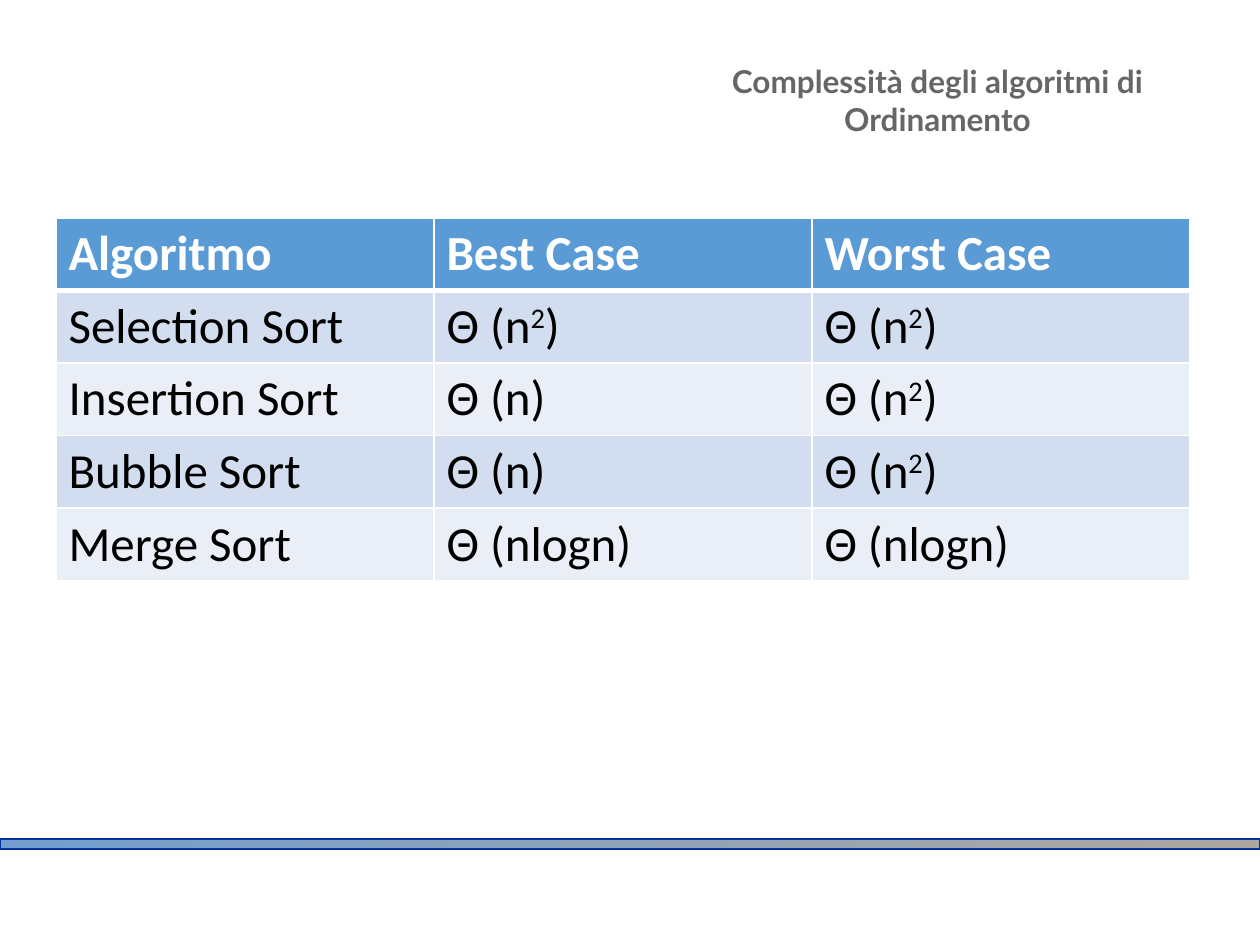
import pptx
import pptx.dml.color
import pptx.enum.shapes
import pptx.enum.text
import pptx.oxml.ns
import pptx.util
from lxml import etree

PX = 914400 // 126  # EMU in one px
COLORS = {
    "title": "666666", "header": "5B9BD5", "band_dark": "D2DEEF",
    "band_light": "EAEFF7", "white": "FFFFFF", "black": "000000",
    "bar_start": "729FCF", "bar_end": "AEA79F", "bar_line": "003399",
}
ROWS = [
    ("Algoritmo", "Best Case", "Worst Case"),
    ("Selection Sort", "Θ (n^2)", "Θ (n^2)"),
    ("Insertion Sort", "Θ (n)", "Θ (n^2)"),
    ("Bubble Sort", "Θ (n)", "Θ (n^2)"),
    ("Merge Sort", "Θ (nlogn)", "Θ (nlogn)"),
]


def rgb(name):
    return pptx.dml.color.RGBColor.from_string(COLORS[name])


def emu(*lengths):
    return [pptx.util.Emu(n * PX) for n in lengths]


def format_run(r, font, size, color, bold):
    r.font.name = font
    r.font.size = pptx.util.Pt(size)
    r.font.bold = bold
    r.font.color.rgb = rgb(color)


def place_title(s, box, text):
    title = s.shapes.title
    title.left, title.top, title.width, title.height = emu(*box)
    tf = title.text_frame
    tf.text = text
    tf.word_wrap = True
    tf.auto_size = pptx.enum.text.MSO_AUTO_SIZE.NONE
    tf.vertical_anchor = pptx.enum.text.MSO_ANCHOR.MIDDLE
    p = tf.paragraphs[0]
    p.alignment = pptx.enum.text.PP_ALIGN.CENTER
    format_run(p.runs[0], "Lato", 18, "title", True)


def add_bar(s, box):
    bar = s.shapes.add_shape(pptx.enum.shapes.MSO_SHAPE.RECTANGLE, *emu(*box))
    bar.shadow.inherit = False
    bar.fill.gradient()
    bar.fill.gradient_angle = 285
    for stop, color in zip(bar.fill.gradient_stops, ("bar_start", "bar_end")):
        stop.color.rgb = rgb(color)
    bar.line.color.rgb = rgb("bar_line")
    bar.line.width = pptx.util.Pt(0.75)


def set_borders(cell, widths):
    """Draw white borders; widths maps each side to points."""
    qn = pptx.oxml.ns.qn
    tcPr = cell._tc.get_or_add_tcPr()
    for side, width in widths.items():
        ln = etree.SubElement(tcPr, qn(f"a:ln{side}"), w=str(pptx.util.Pt(width)))
        fill = etree.SubElement(ln, qn("a:solidFill"))
        etree.SubElement(fill, qn("a:srgbClr"), val=COLORS["white"])


def fill_cell(cell, text, fill, color, bold):
    cell.fill.solid()
    cell.fill.fore_color.rgb = rgb(fill)
    p = cell.text_frame.paragraphs[0]
    # A caret marks the next character as superscript
    base, _, power = text.partition("^")
    for part, raised in ((base, False), (power[:1], True), (power[1:], False)):
        if part:
            r = p.add_run()
            r.text = part
            format_run(r, "Calibri", 28, color, bold)
            if raised:
                r._r.get_or_add_rPr().set("baseline", "30000")


def add_complexity_table(s, box, rows):
    table = s.shapes.add_table(len(rows), len(rows[0]), *emu(*box)).table
    for i, row in enumerate(rows):
        header = i == 0
        fill = "header" if header else ("band_light", "band_dark")[i % 2]
        for j, text in enumerate(row):
            cell = table.cell(i, j)
            set_borders(cell, {"L": 1, "R": 1, "T": 3 if i == 1 else 1,
                               "B": 3 if header else 1})
            fill_cell(cell, text, fill, "white" if header else "black", header)


def main():
    prs = pptx.Presentation()
    prs.slide_width, prs.slide_height = emu(1260, 945)
    s = prs.slides.add_slide(prs.slide_layouts[5])
    add_bar(s, (0, 839, 1260, 10))
    place_title(s, (650, 29, 575, 142), "Complessità degli algoritmi di Ordinamento")
    add_complexity_table(s, (56, 218, 1134, 360), ROWS)
    prs.save("out.pptx")


if __name__ == "__main__":
    main()
